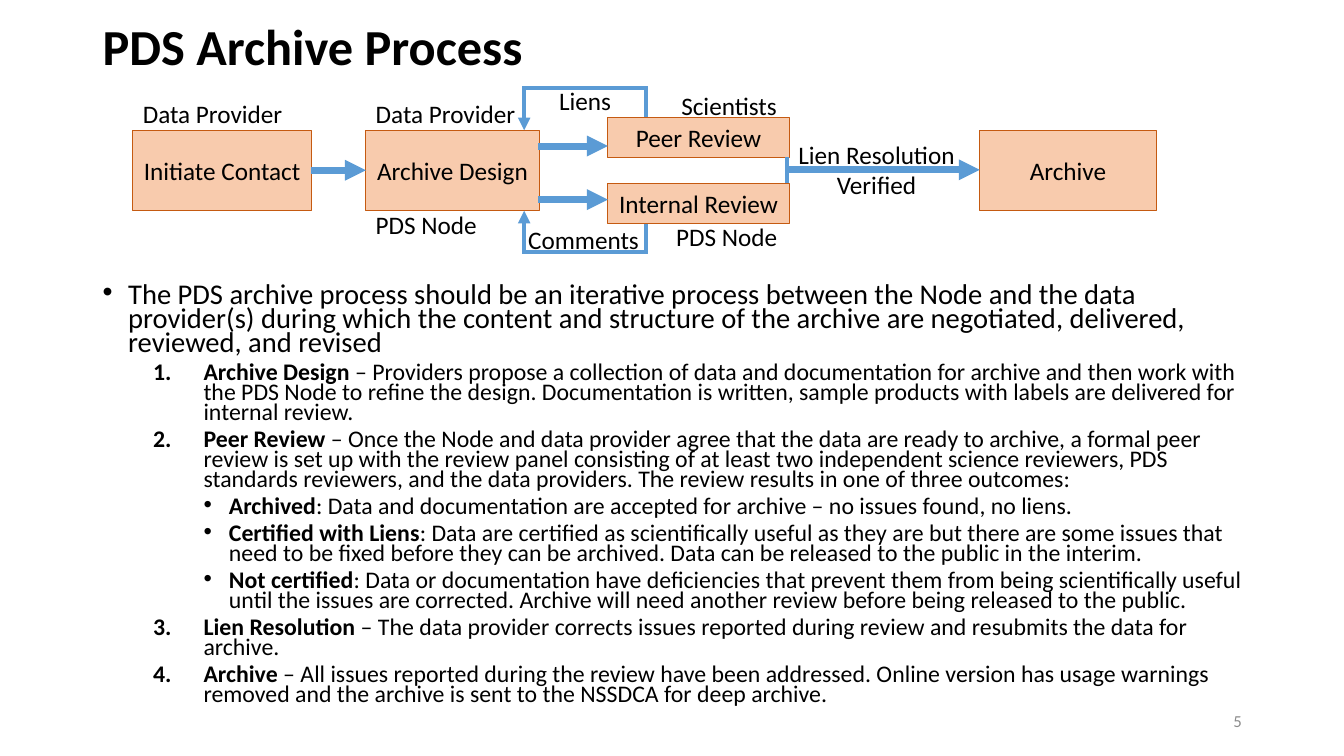
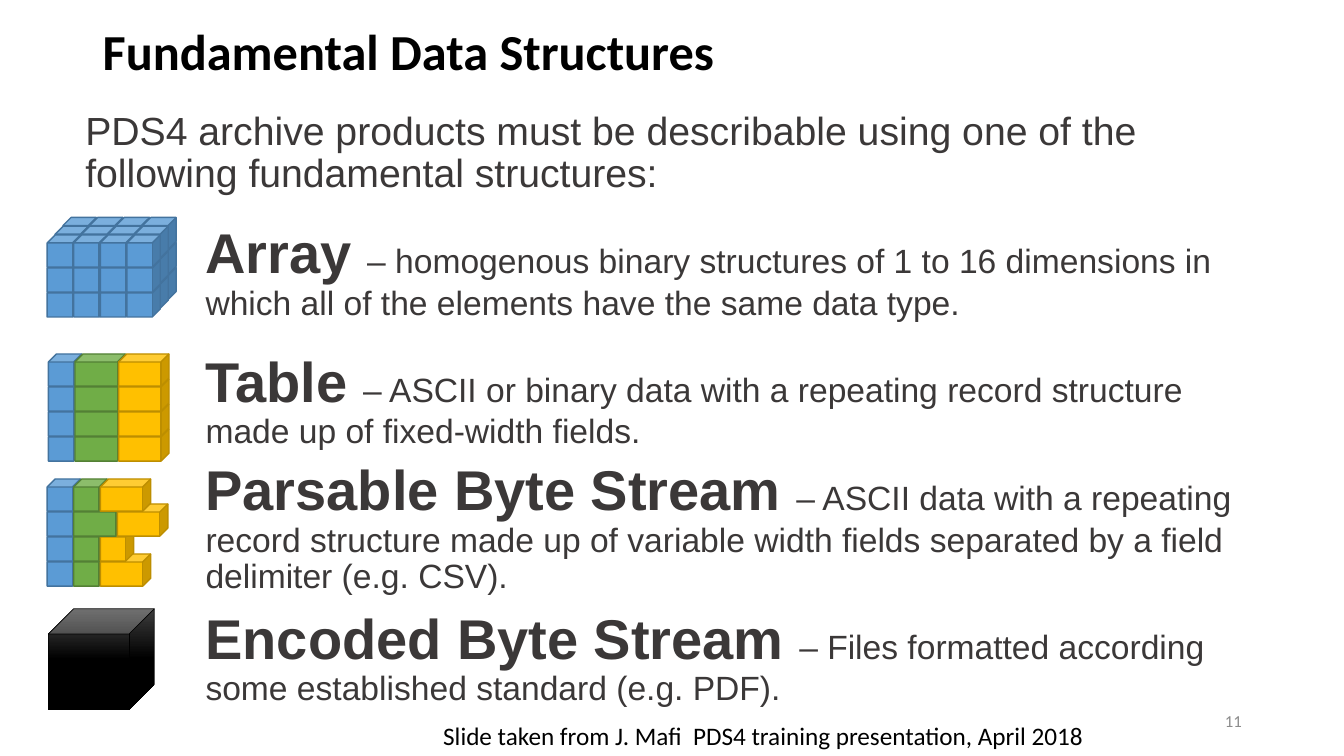
from lxml.etree import SubElement
from pptx import Presentation
from pptx.dml.color import RGBColor
from pptx.enum.shapes import MSO_CONNECTOR, MSO_SHAPE
from pptx.enum.text import MSO_ANCHOR, MSO_AUTO_SIZE, PP_ALIGN
from pptx.oxml.ns import qn
from pptx.util import Cm, Pt

# Shared look
BLACK, GREY, DARK = "000000", "8C8C8C", "3B3838"
PEACH, RUST, BLUE = "F8CBAD", "C55A11", "5B9BD5"
HEAD, SERIF_FREE = "Calibri", "Arial"
CUBE_COLOURS = {"blue": (BLUE, "43739E"), "green": ("70AD47", "538035"),
                "gold": ("FFC000", "BD8E00")}
NARROW, WIDE = 0.84, 1.27            # cube widths
CUBE_H, ROW_STEP, OVERLAP = 0.81, 0.63, 0.17

# Wording: (level, bold lead, rest)
PROCESS = [
    (0, "", "The PDS archive process should be an iterative process between the Node and the "
     "data provider(s) during which the content and structure of the archive are negotiated, "
     "delivered, reviewed, and revised"),
    (1, "Archive Design ", "– Providers propose a collection of data and documentation for "
     "archive and then work with the PDS Node to refine the design. Documentation is written, "
     "sample products with labels are delivered for internal review."),
    (1, "Peer Review ", "– Once the Node and data provider agree that the data are ready to "
     "archive, a formal peer review is set up with the review panel consisting of at least two "
     "independent science reviewers, PDS standards reviewers, and the data providers. The "
     "review results in one of three outcomes:"),
    (2, "Archived", ": Data and documentation are accepted for archive – no issues found, "
     "no liens."),
    (2, "Certified with Liens", ": Data are certified as scientifically useful as they are but "
     "there are some issues that need to be fixed before they can be archived. Data can be "
     "released to the public in the interim."),
    (2, "Not certified", ": Data or documentation have deficiencies that prevent them from "
     "being scientifically useful until the issues are corrected. Archive will need another "
     "review before being released to the public."),
    (1, "Lien Resolution ", "– The data provider corrects issues reported during review and "
     "resubmits the data for archive."),
    (1, "Archive", " – All issues reported during the review have been addressed. Online "
     "version has usage warnings removed and the archive is sent to the NSSDCA for deep "
     "archive."),
]
# Level: (size, space before, left margin, hanging indent, bullet tag, bullet attributes)
LEVELS = [
    (20.4, 10, 0.64, 0.64, "a:buChar", {"char": "•"}),
    (17, 5, 2.54, 1.27, "a:buAutoNum", {"type": "arabicPeriod"}),
    (17, 5, 3.18, 0.64, "a:buChar", {"char": "•"}),
]
# Structure: (name, description, top, height)
STRUCTURES = [
    ("Array ", "– homogenous binary structures of 1 to 16 dimensions in which all of the "
     "elements have the same data type.", 5.56, 2.82),
    ("Table ", "– ASCII or binary data with a repeating record structure made up of "
     "fixed-width fields.", 8.79, 2.82),
    ("Parsable Byte Stream ", "– ASCII data with a repeating record structure made up of "
     "variable width fields separated by a field delimiter (e.g. CSV).", 11.53, 3.71),
    ("Encoded Byte Stream ", "– Files formatted according some established standard "
     "(e.g. PDF).", 15.27, 2.74),
]


def rgb(value):
    return RGBColor.from_string(value)


def add_run(p, content, size=18, font=HEAD, colour=BLACK, bold=False):
    r = p.add_run()
    r.text = content
    r.font.size, r.font.name, r.font.bold = Pt(size), font, bold
    r.font.color.rgb = rgb(colour)


def write(sp, *paragraphs, align=PP_ALIGN.LEFT, anchor=MSO_ANCHOR.TOP, wrap=True,
          spacing=None, before=0, **run_format):
    """Fill a shape; a paragraph is a string or a list of (string, run format)."""
    tf = sp.text_frame
    tf.word_wrap, tf.vertical_anchor = wrap, anchor
    for i, runs in enumerate(paragraphs):
        p = tf.add_paragraph() if i else tf.paragraphs[0]
        p.alignment, p.line_spacing, p.space_before = align, spacing, Pt(before)
        for content, extra in [(runs, {})] if isinstance(runs, str) else runs:
            add_run(p, content, **{**run_format, **extra})
    return sp


def text(s, box, *paragraphs, **options):
    return write(s.shapes.add_textbox(*map(Cm, box)), *paragraphs, **options)


def label(s, box, *lines, **options):
    sp = text(s, box, *lines, wrap=False, **options)
    sp.text_frame.auto_size = MSO_AUTO_SIZE.SHAPE_TO_FIT_TEXT


def shape(shapes, kind, box, fill, line, width):
    sp = shapes.add_shape(kind, *map(Cm, box))
    sp.shadow.inherit = False
    if fill:
        sp.fill.solid()
        sp.fill.fore_color.rgb = rgb(fill)
    sp.line.color.rgb, sp.line.width = rgb(line), Pt(width)
    return sp


def step_box(s, box, caption):
    sp = shape(s.shapes, MSO_SHAPE.RECTANGLE, box, PEACH, RUST, 0.75)
    write(sp, caption, align=PP_ALIGN.CENTER, anchor=MSO_ANCHOR.MIDDLE, wrap=False)


def line(s, x1, y1, x2, y2, width=3, arrow=False):
    c = s.shapes.add_connector(MSO_CONNECTOR.STRAIGHT, *map(Cm, (x1, y1, x2, y2)))
    c.line.color.rgb, c.line.width = rgb(BLUE), Pt(width)
    if arrow:
        SubElement(c.line._get_or_add_ln(), qn("a:tailEnd"), type="triangle")
    SubElement(c._element.spPr, qn("a:effectLst"))


def feedback_loop(s, y_review, y_turn, y_design):
    """Line from a review box back to the design box."""
    x_review, x_design, half = 16.28, 13.21, 0.05
    line(s, x_review, y_review, x_review, y_turn)
    line(s, x_review + half, y_turn, x_design - half, y_turn)
    line(s, x_design, y_turn, x_design, y_design, arrow=True)


def bulleted(p, level):
    size, before, margin, hanging, tag, attributes = LEVELS[level]
    p.level, p.space_before = level, Pt(before)
    pPr = p._p.get_or_add_pPr()
    pPr.set("marL", str(Cm(margin)))
    pPr.set("indent", str(-Cm(hanging)))
    SubElement(pPr, qn("a:buFont"), typeface="Arial" if tag == "a:buChar" else "+mj-lt")
    SubElement(pPr, qn(tag), attributes)
    for r in p.runs:
        r.font.size = Pt(size)


def cube_wall(shapes, rows, left, top):
    """Rows of (colour, width) cubes, drawn from the bottom row up."""
    for i, row in reversed(list(enumerate(rows))):
        x = left
        for colour, width in row:
            box = (x, top + i * ROW_STEP, width, CUBE_H)
            shape(shapes, MSO_SHAPE.CUBE, box, *CUBE_COLOURS[colour], 1)
            x += width - OVERLAP


def new_slide(prs, title, title_top, number):
    s = prs.slides.add_slide(prs.slide_layouts[6])
    text(s, (2.34, title_top, 29.21, 1.57), title, size=36, bold=True, spacing=0.9,
         anchor=MSO_ANCHOR.MIDDLE)
    text(s, (23.93, 17.65, 7.62, 1.02), str(number), size=12, colour=GREY,
         align=PP_ALIGN.RIGHT, anchor=MSO_ANCHOR.MIDDLE)
    return s


def process_slide(prs):
    s = new_slide(prs, "PDS Archive Process", 0.46, 5)
    # Explanation
    body = text(s, (2.34, 7.06, 29.21, 11.18),
                *([(t, {"bold": b}) for t, b in ((lead, True), (rest, False)) if t]
                  for _, lead, rest in PROCESS), spacing=0.7)
    for p, (level, *_) in zip(body.text_frame.paragraphs, PROCESS):
        bulleted(p, level)
    # Steps
    for x, y, w, h, caption in [
            (3.35, 3.28, 4.5, 2.03, "Initiate Contact"),
            (9.22, 3.28, 4.37, 2.03, "Archive Design"),
            (15.32, 4.62, 4.57, 1.02, "Internal Review"),
            (15.32, 2.95, 4.57, 1.02, "Peer Review"),
            (24.69, 3.28, 4.45, 2.03, "Archive")]:
        step_box(s, (x, y, w, h), caption)
    # Forward arrows
    for ends in [(7.85, 4.29, 9.22, 4.29), (13.57, 3.68, 15.32, 3.68),
                 (13.57, 5.03, 15.32, 5.03), (19.84, 4.28, 24.69, 4.28)]:
        line(s, *ends, width=5, arrow=True)
    line(s, 19.84, 3.96, 19.84, 4.6)
    # Feedback to the design step
    feedback_loop(s, 2.95, 2.22, 3.28)
    feedback_loop(s, 5.64, 6.35, 5.31)
    # Actors and outcomes
    for x, y, w, caption in [
            (3.35, 2.36, 4.06, "Data Provider"), (9.22, 2.36, 4.06, "Data Provider"),
            (9.22, 5.16, 3.1, "PDS Node"), (16.79, 5.44, 3.1, "PDS Node"),
            (16.92, 2.16, 2.95, "Scientists"), (13.84, 2.03, 1.83, "Liens"),
            (13.06, 5.54, 3.33, "Comments")]:
        label(s, (x, y, w, 1.02), caption)
    label(s, (19.84, 3.38, 4.5, 1.8), "Lien Resolution", "Verified", align=PP_ALIGN.CENTER)


def structures_slide(prs):
    s = new_slide(prs, "Fundamental Data Structures", 0.58, 11)
    prose = dict(font=SERIF_FREE, colour=DARK, spacing=0.9, before=10)
    text(s, (1.9, 2.69, 29.36, 2.46), "PDS4 archive products must be describable using one of "
         "the following fundamental structures:", size=28, **prose)
    for name, description, top, height in STRUCTURES:
        text(s, (4.93, top, 26.62, height),
             [(name, {"size": 40, "bold": True}), (description, {})], size=24, **prose)
    # Array: three layers, back to front
    array = s.shapes.add_group_shape().shapes
    for layer in (2, 1, 0):
        cube_wall(array, [[("blue", NARROW)] * 4] * 3, 1.19 + 0.2 * layer, 5.92 - 0.22 * layer)
    # Table: equal records
    record = [("blue", NARROW), ("green", WIDE), ("gold", WIDE)]
    cube_wall(s.shapes.add_group_shape().shapes, [record] * 4, 1.22, 8.92)
    # Parsable byte stream: records of varying width
    widths = [(NARROW, WIDE), (WIDE, WIDE), (NARROW, NARROW), (NARROW, WIDE)]
    records = [[("blue", NARROW), ("green", g), ("gold", y)] for g, y in widths]
    cube_wall(s.shapes.add_group_shape().shapes, records, 1.19, 12.07)
    # Encoded byte stream: black box
    box = shape(s.shapes, MSO_SHAPE.CUBE, (1.22, 15.34, 2.67, 2.54), None, BLACK, 0.5)
    box.fill.gradient()
    box.fill.gradient_angle = 270
    for stop, position, colour in zip(box.fill.gradient_stops, (0, 0.5), ("4B4B4B", BLACK)):
        stop.position, stop.color.rgb = position, rgb(colour)
    # Source credit
    label(s, (10.92, 18.03, 16.84, 1.02),
          "Slide taken from J. Mafi  PDS4 training presentation, April 2018")


def main():
    prs = Presentation()
    prs.slide_width, prs.slide_height = Cm(33.87), Cm(19.05)
    process_slide(prs)
    structures_slide(prs)
    prs.save("out.pptx")


if __name__ == "__main__":
    main()
